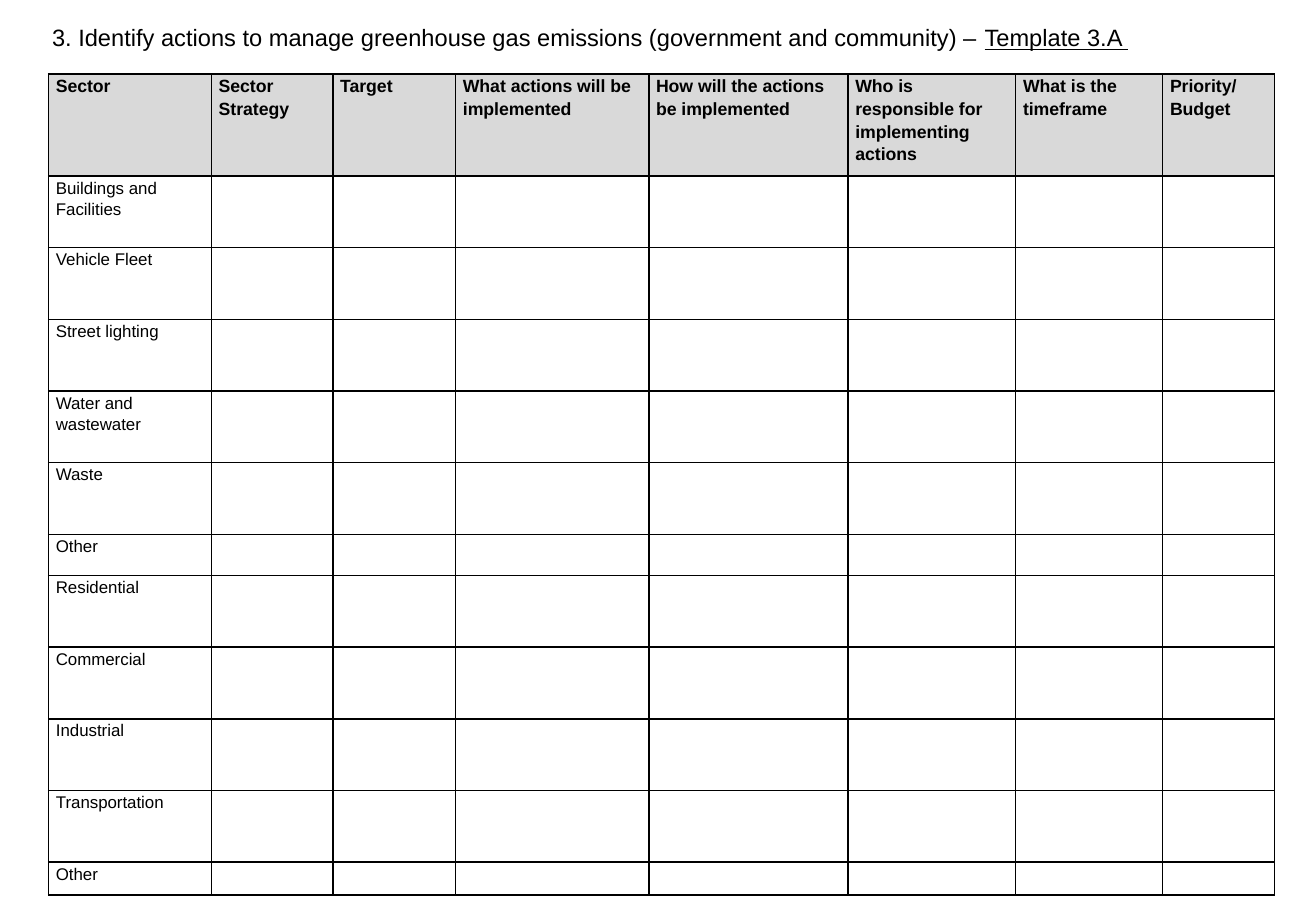
from lxml import etree
from pptx import Presentation
from pptx import util as u
from pptx.dml.color import RGBColor
from pptx.oxml.ns import qn

TITLE = [
    ("3. Identify actions to manage greenhouse gas emissions (government and community) – ", False),
    ("Template 3.A ", True),
]
COLUMNS = [
    ("Sector", 1.34),
    ("Sector Strategy", 1),
    ("Target", 1.01),
    ("What actions will be implemented", 1.59),
    ("How will the actions be implemented", 1.64),
    ("Who is responsible for implementing actions", 1.38),
    ("What is the timeframe", 1.21),
    ("Priority/ Budget", 0.92),
]
TALL = 0.59
SECTORS = [
    ("Buildings and Facilities", TALL),
    ("Vehicle Fleet", TALL),
    ("Street lighting", TALL),
    ("Water and wastewater", TALL),
    ("Waste", TALL),
    ("Other", 0.34),
    ("Residential", TALL),
    ("Commercial", TALL),
    ("Industrial", TALL),
    ("Transportation", TALL),
    ("Other", 0.27),
]
HEADER_HEIGHT = 0.84
INK, HEADER_FILL = "000000", "D9D9D9"
TITLE_FONT = {"name": "Arial", "size": u.Pt(14)}
HEADER_FONT = {"name": "Arial", "size": u.Pt(10.5), "bold": True}
SECTOR_FONT = {"name": "Arial", "size": u.Pt(10), "bold": False}
CELL_MARGINS = {
    "margin_left": u.Inches(0.06), "margin_right": u.Inches(0.06),
    "margin_top": 0, "margin_bottom": 0,
}
CELL_SPACING = {"line_spacing": 1.15, "space_after": u.Pt(10)}


def color(value):
    return RGBColor.from_string(value)


def apply(target, values):
    for name, value in values.items():
        setattr(target, name, value)


def add_run(paragraph, words, font):
    run = paragraph.add_run()
    run.text = words
    apply(run.font, font)
    run.font.color.rgb = color(INK)


def add_borders(cell):
    properties = cell._tc.get_or_add_tcPr()
    for side in ("a:lnL", "a:lnR", "a:lnT", "a:lnB"):
        line = etree.SubElement(properties, qn(side), w=str(u.Pt(1)))
        fill = etree.SubElement(line, qn("a:solidFill"))
        etree.SubElement(fill, qn("a:srgbClr"), val=INK)


def fill_cell(cell, words, font, background):
    apply(cell, CELL_MARGINS)
    add_borders(cell)
    if background:
        cell.fill.solid()
        cell.fill.fore_color.rgb = color(background)
    else:
        cell.fill.background()
    paragraph = cell.text_frame.paragraphs[0]
    if words:
        apply(paragraph, CELL_SPACING)
        add_run(paragraph, words, font)
    else:
        etree.SubElement(paragraph._p, qn("a:endParaRPr"), sz="1000")


deck = Presentation()
apply(deck, {"slide_width": u.Inches(10.83), "slide_height": u.Inches(7.5)})
slide = deck.slides.add_slide(deck.slide_layouts[6])

widths = [width for _, width in COLUMNS]
heights = [HEADER_HEIGHT] + [height for _, height in SECTORS]
rows = [[heading for heading, _ in COLUMNS]]
rows += [[sector] + [""] * (len(COLUMNS) - 1) for sector, _ in SECTORS]

actions = slide.shapes.add_table(
    len(rows), len(COLUMNS), u.Inches(0.4), u.Inches(0.61),
    u.Inches(sum(widths)), u.Inches(sum(heights)),
).table
apply(actions, {"first_row": False, "horz_banding": False})
for column, width in zip(actions.columns, widths):
    column.width = u.Inches(width)
for index, (row, height, entries) in enumerate(zip(actions.rows, heights, rows)):
    row.height = u.Inches(height)
    font, background = (SECTOR_FONT, None) if index else (HEADER_FONT, HEADER_FILL)
    for cell, words in zip(row.cells, entries):
        fill_cell(cell, words, font, background)

title = slide.shapes.add_textbox(
    u.Inches(0.33), u.Inches(0.14), u.Inches(10.3), u.Inches(0.34)
).text_frame
title.word_wrap = True
for words, underlined in TITLE:
    add_run(title.paragraphs[0], words, {**TITLE_FONT, "underline": underlined})

deck.save("out.pptx")
